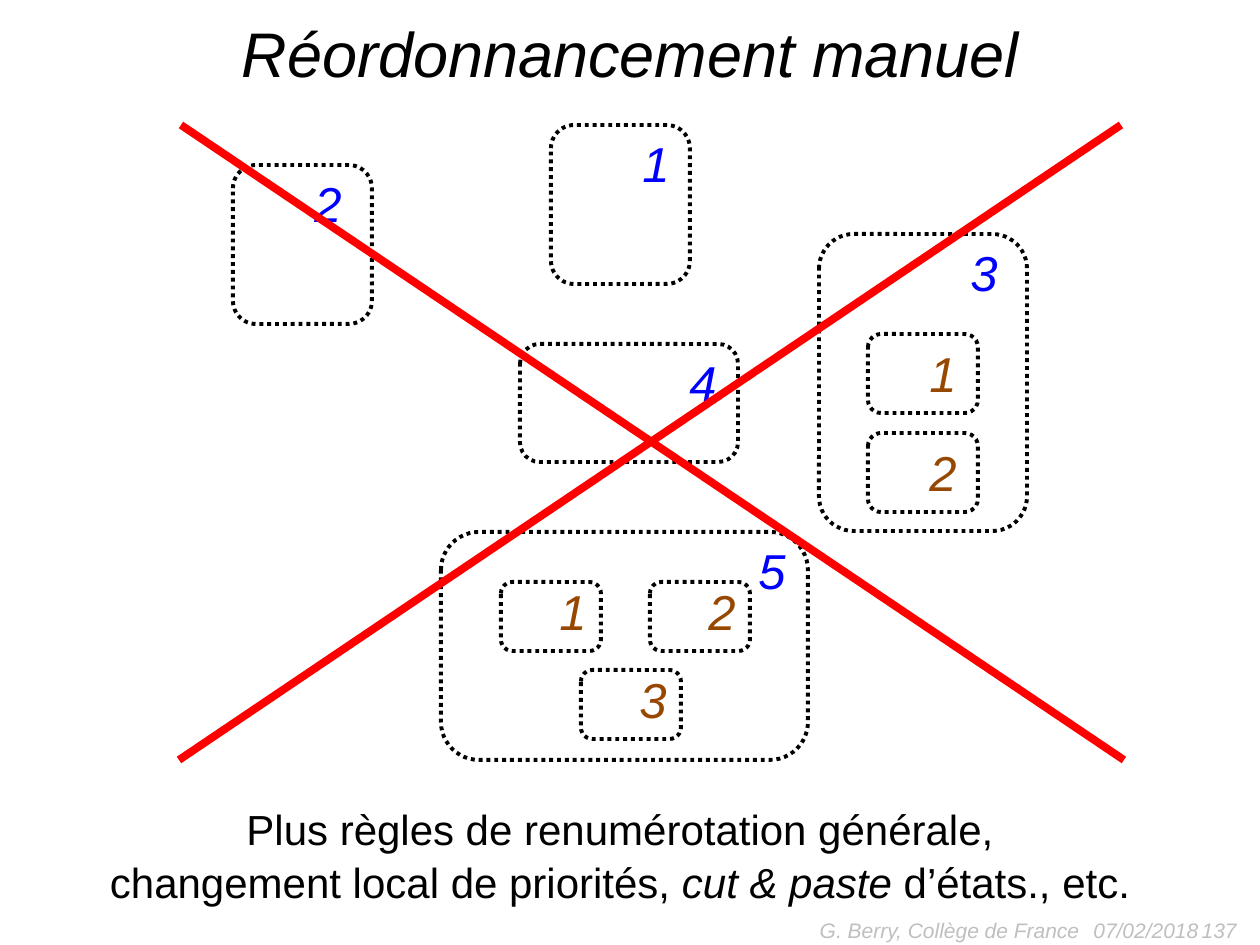
from lxml.etree import SubElement
from pptx import Presentation
from pptx.dml.color import RGBColor
from pptx.enum.dml import MSO_LINE
from pptx.enum.shapes import MSO_CONNECTOR, MSO_SHAPE
from pptx.enum.text import MSO_ANCHOR as ANCHOR, PP_ALIGN as ALIGN
from pptx.oxml.ns import qn
from pptx.util import Emu, Pt

PX = 914400 // 126
COLORS = {"text": "000000", "state": "0000FF", "substate": "964700",
          "footer": "BFBFBF", "cross": "FF0000"}
TITLE = "Réordonnancement manuel"
CAPTION = [
    [("Plus règles de renumérotation générale,", False)],
    [("changement local de priorités, ", False), ("cut & paste", True),
     (" d’états., etc.", False)],
]
FOOTERS = [
    ("07/02/2018", 1081, 294, ALIGN.LEFT),
    ("137", 955, 294, ALIGN.RIGHT),
    ("G. Berry, Collège de France", 693, 399, ALIGN.RIGHT),
]
STATES = [
    ("1", (551, 125, 139, 159), 79),
    ("2", (233, 165, 139, 159), 69),
    ("3", (819, 234, 208, 297), 139),
    ("4", (520, 344, 218, 118), 157),
    ("5", (441, 532, 367, 228), 305),
]
SUBSTATE_GROUPS = [
    {"size": (100, 69), "label": (46, -10),
     "places": [(501, 582), (650, 582), (581, 670)]},
    {"size": (110, 79), "label": (49, 0),
     "places": [(868, 334), (868, 433)]},
]
CROSS = [((179, 760), (1121, 125)), ((181, 125), (1124, 760))]


def px(*values):
    return [Emu(value * PX) for value in values]


def rgb(name):
    return RGBColor.from_string(COLORS[name])


def set_all(target, values):
    for name, value in values.items():
        setattr(target, name, value)


def add_text(slide, place, paragraphs, size, color, align=ALIGN.LEFT,
             anchor=ANCHOR.TOP, wrap=True, spacing=1.0):
    frame = slide.shapes.add_textbox(*px(*place)).text_frame
    set_all(frame, {"word_wrap": wrap, "vertical_anchor": anchor})
    for index, runs in enumerate(paragraphs):
        paragraph = frame.add_paragraph() if index else frame.paragraphs[0]
        set_all(paragraph, {"alignment": align, "line_spacing": spacing})
        for text, italic in runs:
            run = paragraph.add_run()
            run.text = text
            set_all(run.font, {"name": "Arial", "size": Pt(size), "italic": italic})
            run.font.color.rgb = rgb(color)


def add_state(slide, box):
    shape = slide.shapes.add_shape(MSO_SHAPE.ROUNDED_RECTANGLE, *px(*box))
    shape.shadow.inherit = False
    shape.fill.background()
    shape.line.color.rgb = rgb("text")
    set_all(shape.line, {"width": Pt(2.25), "dash_style": MSO_LINE.ROUND_DOT})


def add_number(slide, left, top, number, color):
    add_text(slide, (left, top, 53, 71), [[(number, True)]], 28, color,
             wrap=False, spacing=1.05)


def add_cross_line(slide, start, end):
    line = slide.shapes.add_connector(MSO_CONNECTOR.STRAIGHT, *px(*start, *end))
    line.line.color.rgb = rgb("cross")
    line.line.width = Pt(4.5)
    SubElement(line._element.spPr, qn("a:effectLst"))


def main():
    presentation = Presentation()
    set_all(presentation, {"slide_width": Emu(1260 * PX),
                           "slide_height": Emu(945 * PX)})
    slide = presentation.slides.add_slide(presentation.slide_layouts[6])

    for text, left, width, align in FOOTERS:
        add_text(slide, (left, 905, width, 50), [[(text, True)]], 12, "footer",
                 align, ANCHOR.MIDDLE)
    add_text(slide, (32, 6, 1197, 90), [[(TITLE, True)]], 36, "text",
             ALIGN.CENTER, ANCHOR.BOTTOM)
    add_text(slide, (92, 795, 1056, 120), CAPTION, 24, "text", ALIGN.CENTER,
             wrap=False, spacing=1.05)

    for number, box, label_shift in STATES:
        add_state(slide, box)
        add_number(slide, box[0] + label_shift, box[1] - 1, number, "state")
    for group in SUBSTATE_GROUPS:
        shift_x, shift_y = group["label"]
        for number, (left, top) in enumerate(group["places"], 1):
            add_state(slide, (left, top, *group["size"]))
            add_number(slide, left + shift_x, top + shift_y, str(number), "substate")
    for start, end in CROSS:
        add_cross_line(slide, start, end)

    presentation.save("out.pptx")


if __name__ == "__main__":
    main()
